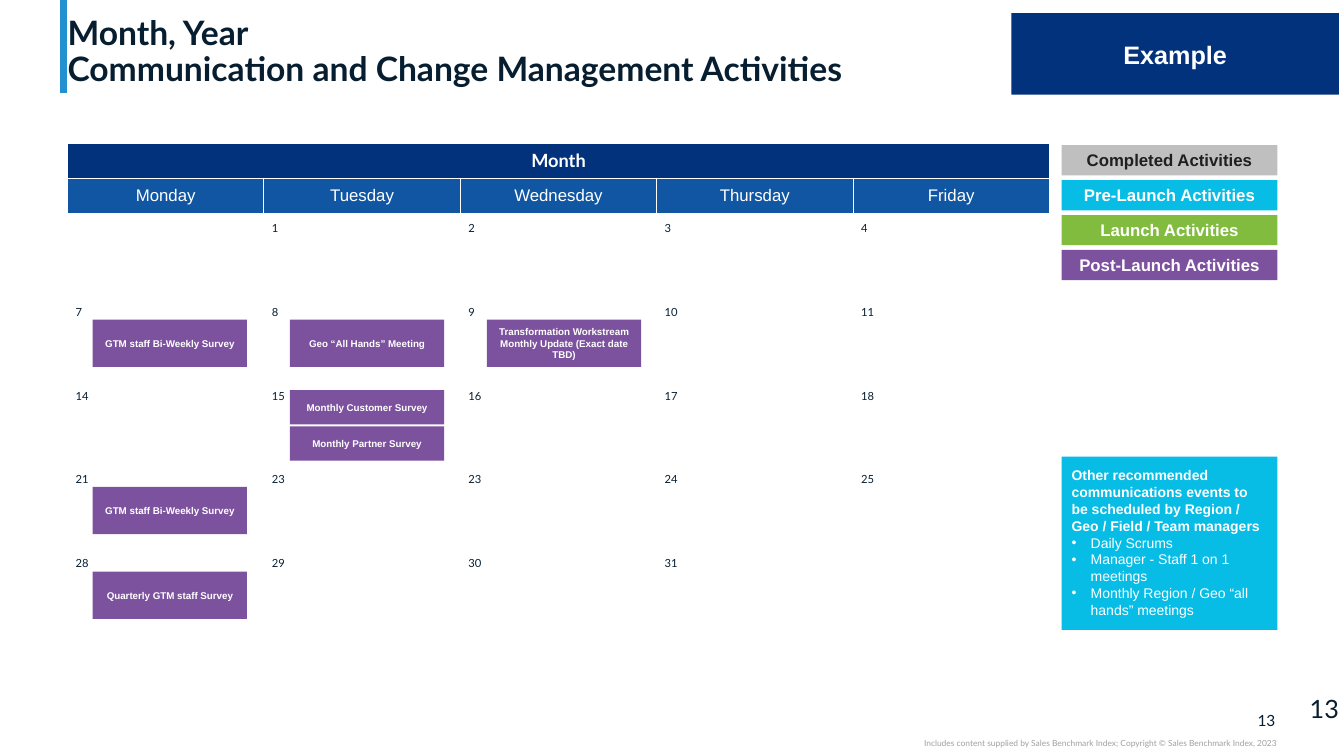
"""Build a monthly calendar slide of communication and change management activities."""
from dataclasses import dataclass

from lxml import etree
from pptx import Presentation
from pptx.dml.color import RGBColor
from pptx.enum.shapes import MSO_CONNECTOR, MSO_SHAPE
from pptx.enum.text import MSO_ANCHOR as Anchor, PP_ALIGN as Align
from pptx.oxml.ns import qn
from pptx.util import Inches, Pt


@dataclass(frozen=True)
class Theme:
    ink: str = "071E31"
    black: str = "1F1F1F"
    white: str = "FFFFFF"
    navy: str = "03327C"
    blue: str = "1156A3"
    accent: str = "2391CF"
    cyan: str = "07BCE5"
    green: str = "82BC3F"
    purple: str = "7C519E"
    silver: str = "BFBFBF"
    footer: str = "A0A0A0"
    heading_font: str = "Lato"
    body_font: str = "Arial"
    title_size: float = 24
    large_size: float = 18
    month_size: float = 13
    label_size: float = 12
    page_size: float = 11
    advice_size: float = 10
    date_size: float = 8
    event_size: float = 7
    footer_size: float = 6


theme = Theme()


def style(paragraph, size, color, font=theme.body_font, bold=False, align=Align.LEFT):
    paragraph.alignment = align
    paragraph.font.size = Pt(size)
    paragraph.font.name = font
    paragraph.font.bold = bold
    paragraph.font.color.rgb = RGBColor.from_string(color)


def add_block(left, top, width, height, fill, text, size, color=theme.white, side=0.1):
    block = slide.shapes.add_shape(
        MSO_SHAPE.RECTANGLE, Inches(left), Inches(top), Inches(width), Inches(height))
    block.shadow.inherit = False
    block.fill.solid()
    block.fill.fore_color.rgb = RGBColor.from_string(fill)
    block.line.fill.background()
    frame = block.text_frame
    frame.word_wrap = True
    frame.vertical_anchor = Anchor.MIDDLE
    frame.margin_left = frame.margin_right = Inches(side)
    frame.margin_top = frame.margin_bottom = Inches(0.05)
    frame.text = text
    style(frame.paragraphs[0], size, color, bold=True, align=Align.CENTER)
    return frame


deck = Presentation()
deck.slide_width, deck.slide_height = Inches(13.33), Inches(7.5)
slide = deck.slides.add_slide(deck.slide_layouts[5])

accent_bar = slide.shapes.add_connector(
    MSO_CONNECTOR.STRAIGHT, Inches(0.63), Inches(0), Inches(0.63), Inches(0.92))
accent_bar.line.color.rgb = RGBColor.from_string(theme.accent)
accent_bar.line.width = Pt(5)
etree.SubElement(accent_bar._element.spPr, qn("a:effectLst"))

title = slide.shapes.title
title.left, title.top = Inches(0.67), Inches(0.04)
title.width, title.height = Inches(11.99), Inches(0.84)
heading = title.text_frame
heading.text = "Month, Year\vCommunication and Change Management Activities"
heading.vertical_anchor = Anchor.BOTTOM
heading.margin_left = heading.margin_right = heading.margin_top = heading.margin_bottom = 0
heading.paragraphs[0].line_spacing = 0.9
style(heading.paragraphs[0], theme.title_size, theme.ink, theme.heading_font, bold=True)

COPYRIGHT = "Includes content supplied by Sales Benchmark Index; Copyright © Sales Benchmark Index, 2023"
for left, top, width, height, text, size, color, align in [
    (12.32, 7.05, 0.33, 0.19, "13", theme.page_size, theme.ink, Align.RIGHT),
    (7.5, 7.32, 5.16, 0.1, COPYRIGHT, theme.footer_size, theme.footer, Align.RIGHT),
    (12.99, 6.93, 0.34, 0.2, "13", theme.large_size, theme.ink, Align.LEFT),
]:
    note = slide.shapes.add_textbox(
        Inches(left), Inches(top), Inches(width), Inches(height)).text_frame
    note.word_wrap = True
    note.vertical_anchor = Anchor.MIDDLE
    note.margin_left = note.margin_right = note.margin_top = note.margin_bottom = 0
    note.text = text
    style(note.paragraphs[0], size, color, theme.heading_font, align=align)

calendar_rows = [
    ["Month", "", "", "", ""],
    ["Monday", "Tuesday", "Wednesday", "Thursday", "Friday"],
    ["", "1", "2", "3", "4"],
    ["7", "8", "9", "10", "11"],
    ["14", "15", "16", "17", "18"],
    ["21", "23", "23", "24", "25"],
    ["28", "29", "30", "31", ""],
]
calendar = slide.shapes.add_table(
    7, 5, Inches(0.67), Inches(1.42), Inches(9.74), Inches(4.84)).table
calendar.first_row = calendar.horz_banding = False
for column in calendar.columns:
    column.width = Inches(9.74 / 5)
for row_index, labels in enumerate(calendar_rows):
    is_header = row_index < 2
    calendar.rows[row_index].height = Inches(0.35 if is_header else 0.83)
    for column_index, label in enumerate(labels):
        cell = calendar.cell(row_index, column_index)
        cell.margin_left = cell.margin_right = Inches(0.08)
        cell.margin_top = Inches(0.04 if is_header else 0.08)
        cell.margin_bottom = Inches(0.04 if is_header else 0)
        cell.vertical_anchor = Anchor.MIDDLE if is_header else Anchor.TOP
        properties = cell._tc.get_or_add_tcPr()
        for edge in ("a:lnL", "a:lnR", "a:lnT", "a:lnB"):
            border = etree.SubElement(properties, qn(edge), w=str(Pt(0.75)))
            border_fill = etree.SubElement(border, qn("a:solidFill"))
            etree.SubElement(border_fill, qn("a:srgbClr"), val=theme.white)
        cell.fill.solid()
        cell.fill.fore_color.rgb = RGBColor.from_string(
            (theme.navy, theme.blue)[row_index] if is_header else theme.white)
        cell.text = label
        label_line = cell.text_frame.paragraphs[0]
        if row_index == 0:
            style(label_line, theme.month_size, theme.white, theme.heading_font, True, Align.CENTER)
        elif is_header:
            style(label_line, theme.label_size, theme.white, align=Align.CENTER)
        else:
            style(label_line, theme.date_size, theme.ink, theme.heading_font)
calendar.cell(0, 0).merge(calendar.cell(0, 4))

legend = [
    ("Completed Activities", theme.silver, theme.black),
    ("Pre-Launch Activities", theme.cyan, theme.white),
    ("Launch Activities", theme.green, theme.white),
    ("Post-Launch Activities", theme.purple, theme.white),
]
for index, (text, fill, color) in enumerate(legend):
    add_block(10.53, 1.44 + index * 1.04 / 3, 2.14, 0.3, fill, text,
              theme.label_size, color, side=0.03)

events = [
    (0, 3.17, 0.47, "GTM staff Bi-Weekly Survey"),
    (1, 3.17, 0.47, "Geo “All Hands” Meeting"),
    (2, 3.17, 0.47, "Transformation Workstream Monthly Update (Exact date TBD)"),
    (1, 3.87, 0.34, "Monthly Customer Survey"),
    (1, 4.23, 0.34, "Monthly Partner Survey"),
    (0, 4.83, 0.47, "GTM staff Bi-Weekly Survey"),
    (0, 5.67, 0.47, "Quarterly GTM staff Survey"),
]
for weekday, top, height, text in events:
    add_block(0.92 + weekday * 1.955, top, 1.53, height, theme.purple, text, theme.event_size)

advice = add_block(
    10.53, 4.53, 2.14, 1.72, theme.cyan,
    "Other recommended communications events to be scheduled by Region / Geo / Field / Team managers",
    theme.advice_size)
advice.vertical_anchor = Anchor.TOP
advice.margin_top = advice.margin_bottom = Inches(0.1)
advice.paragraphs[0].alignment = Align.LEFT
for text in ["Daily Scrums", "Manager - Staff 1 on 1 meetings",
             "Monthly Region / Geo “all hands” meetings"]:
    suggestion = advice.add_paragraph()
    suggestion.text = text
    indent = suggestion._p.get_or_add_pPr()
    indent.set("marL", str(Inches(0.19)))
    indent.set("indent", str(Inches(-0.19)))
    bullet_color = etree.SubElement(indent, qn("a:buClr"))
    etree.SubElement(bullet_color, qn("a:srgbClr"), val=theme.white)
    etree.SubElement(indent, qn("a:buFont"), typeface=theme.body_font)
    etree.SubElement(indent, qn("a:buChar"), char="•")
    style(suggestion, theme.advice_size, theme.white)

add_block(10.03, 0.13, 3.25, 0.81, theme.navy, "Example", theme.large_size)

deck.save("out.pptx")
